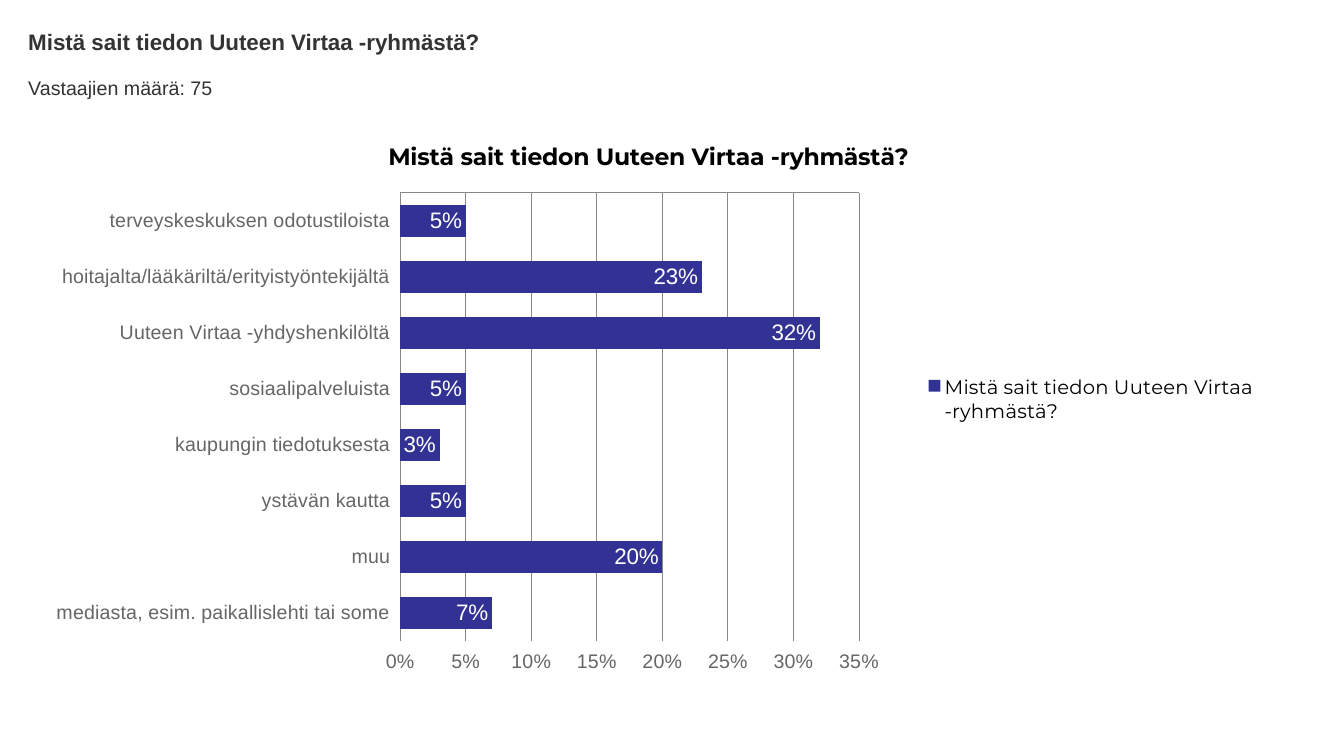
from dataclasses import dataclass

from lxml.etree import SubElement
from pptx import Presentation
from pptx.chart.chart import Chart
from pptx.chart.data import CategoryChartData
from pptx.dml.color import RGBColor
from pptx.enum.chart import XL_CHART_TYPE as ChartType
from pptx.enum.chart import XL_LABEL_POSITION as LabelPosition
from pptx.enum.chart import XL_LEGEND_POSITION as LegendPosition
from pptx.enum.chart import XL_TICK_LABEL_POSITION as TickLabels
from pptx.enum.chart import XL_TICK_MARK as TickMark
from pptx.oxml.ns import qn
from pptx.util import Inches, Pt

COLORS = {
    "heading": "333333",
    "axis_text": "666666",
    "grid": "888888",
    "bar": "323294",
    "black": "000000",
    "white": "FFFFFF",
}
QUESTION = "Mistä sait tiedon Uuteen Virtaa -ryhmästä?"


@dataclass
class Heading:
    text: str
    top: float
    height: float
    size: float
    bold: bool = False


@dataclass
class Answer:
    source: str
    share: float


HEADINGS = [
    Heading(QUESTION, 0.28, 0.27, 16, True),
    Heading("Vastaajien määrä: 75", 0.75, 0.23, 14),
]
ANSWERS = [
    Answer("terveyskeskuksen odotustiloista", 0.05),
    Answer("hoitajalta/lääkäriltä/erityistyöntekijältä", 0.23),
    Answer("Uuteen Virtaa -yhdyshenkilöltä", 0.32),
    Answer("sosiaalipalveluista", 0.05),
    Answer("kaupungin tiedotuksesta", 0.03),
    Answer("ystävän kautta", 0.05),
    Answer("muu", 0.20),
    Answer("mediasta, esim. paikallislehti tai some", 0.07),
]


def rgb(color: str) -> RGBColor:
    return RGBColor.from_string(COLORS[color])


def set_font(font, *, size: float, color: str, face: str = "Arial", bold: bool = False) -> None:
    font.size, font.bold, font.name = Pt(size), bold, face
    font.color.rgb = rgb(color)


def write(frame, text: str, **font_format) -> None:
    run = frame.paragraphs[0].add_run()
    run.text = text
    set_font(run.font, **font_format)


def add_heading(slide, heading: Heading) -> None:
    box = slide.shapes.add_textbox(
        Inches(0.28), Inches(heading.top), Inches(12.78), Inches(heading.height))
    frame = box.text_frame
    frame.word_wrap = True
    frame.margin_left = frame.margin_right = frame.margin_top = frame.margin_bottom = 0
    write(frame, heading.text, size=heading.size, color="heading", bold=heading.bold)


def style_line(line) -> None:
    line.color.rgb = rgb("grid")
    line.width = Pt(0.75)


def style_axis(axis, label_position: TickLabels, gridlines: bool) -> None:
    axis.major_tick_mark = axis.minor_tick_mark = TickMark.NONE
    axis.tick_label_position = label_position
    axis.has_major_gridlines = gridlines
    if gridlines:
        style_line(axis.major_gridlines.format.line)
    style_line(axis.format.line)
    set_font(axis.tick_labels.font, size=14, color="axis_text")


def place_plot(chart: Chart, **fractions: float) -> None:
    """Fix the inner plot area as fractions of the chart frame."""
    plot_area = chart.element.find(".//" + qn("c:plotArea"))
    for old in plot_area.findall(qn("c:layout")):
        plot_area.remove(old)
    layout = SubElement(plot_area, qn("c:layout"))
    plot_area.insert(0, layout)
    manual = SubElement(layout, qn("c:manualLayout"))
    settings = {"layoutTarget": "inner", "xMode": "edge", "yMode": "edge", **fractions}
    for tag, value in settings.items():
        SubElement(manual, qn(f"c:{tag}")).set("val", str(value))


def add_answer_chart(slide) -> None:
    data = CategoryChartData(number_format="0%")
    data.categories = [answer.source for answer in ANSWERS]
    data.add_series(QUESTION, [answer.share for answer in ANSWERS])
    chart = slide.shapes.add_chart(
        ChartType.BAR_CLUSTERED, Inches(0.28), Inches(1.19),
        Inches(12.3), Inches(5.56), data).chart
    set_font(chart.font, size=14, color="black", face="Montserrat")

    # Title and legend
    chart.has_title = True
    write(chart.chart_title.text_frame, QUESTION,
          size=16.8, color="black", face="Montserrat", bold=True)
    chart.chart_title.include_in_layout = False
    chart.has_legend = True
    chart.legend.position = LegendPosition.RIGHT
    chart.legend.include_in_layout = False
    set_font(chart.legend.font, size=14, color="black", face="Montserrat")

    # Axes: first answer on top, percentages below
    style_axis(chart.category_axis, TickLabels.LOW, gridlines=False)
    chart.category_axis.reverse_order = True
    shares = chart.value_axis
    style_axis(shares, TickLabels.HIGH, gridlines=True)
    shares.minimum_scale, shares.maximum_scale, shares.major_unit = 0, 0.35, 0.05
    shares.tick_labels.number_format = "0%"
    shares.tick_labels.number_format_is_linked = False

    # Bars and their labels
    plot = chart.plots[0]
    plot.vary_by_categories = False
    plot.gap_width, plot.overlap = 75, 40
    bars = plot.series[0]
    bars.format.fill.solid()
    bars.format.fill.fore_color.rgb = rgb("bar")
    labels = bars.data_labels
    labels.show_value = True
    labels.position = LabelPosition.INSIDE_END
    labels.number_format = "0%"
    labels.number_format_is_linked = False
    set_font(labels.font, size=16, color="white")

    place_plot(chart, x=0.3, y=0.13, w=0.37, h=0.8)


def main() -> None:
    deck = Presentation()
    deck.slide_width, deck.slide_height = Inches(13.33), Inches(7.5)
    slide = deck.slides.add_slide(deck.slide_layouts[6])
    for heading in HEADINGS:
        add_heading(slide, heading)
    add_answer_chart(slide)
    deck.save("out.pptx")


if __name__ == "__main__":
    main()
